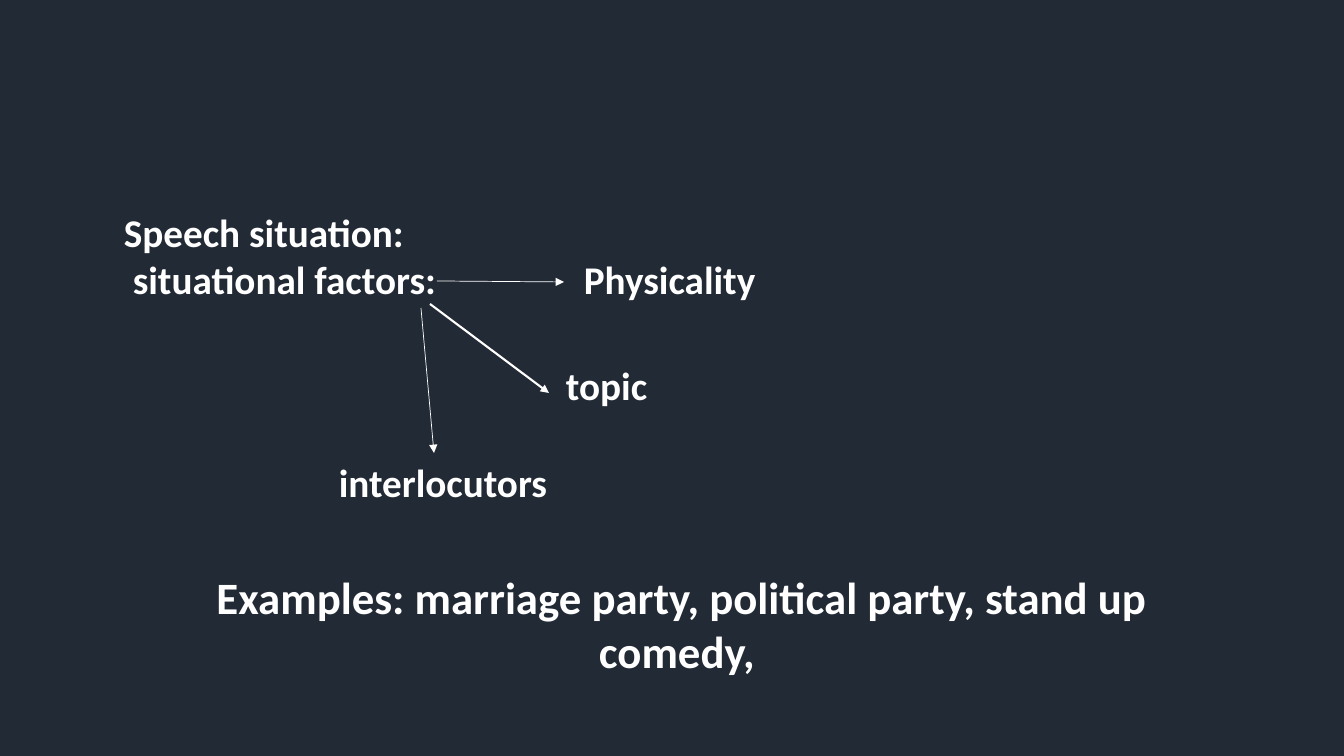
"""Build the speech situation slide with its three situational factors."""
import pptx
import pptx.util
import pptx.dml.color
import pptx.enum.shapes
import pptx.enum.text
import pptx.oxml.ns
import lxml.etree

WIDTH, HEIGHT = 1344, 756
PX = pptx.util.Inches(7.5) / HEIGHT
THEME = {"font": "Calibri", "bg": "222A35", "ink": "FFFFFF",
         "body": 28, "examples": 32, "thin": 0.5, "thick": 1.5}

HEADING = (["Speech situation:", " situational factors:"], (114, 203, 900, 105))
FACTORS = [
    ("Physicality", (574, 250, 371, 57), (437, 281, 564, 282), "thin"),
    ("topic", (556, 356, 191, 57), (430, 304, 549, 393), "thick"),
    ("interlocutors", (329, 453, 287, 57), (421, 308, 434, 453), "thin"),
]
EXAMPLES = ("Examples: marriage party, political party, stand up comedy, ",
            (128, 565, 1108, 65))


def emu(*lengths):
    return [round(n * PX) for n in lengths]


def color(name):
    return pptx.dml.color.RGBColor.from_string(THEME[name])


def add_text(s, lines, box, size="body", align="LEFT"):
    tf = s.shapes.add_textbox(*emu(*box)).text_frame
    tf.word_wrap = True
    tf.auto_size = pptx.enum.text.MSO_AUTO_SIZE.SHAPE_TO_FIT_TEXT
    for i, line in enumerate(lines):
        p = tf.add_paragraph() if i else tf.paragraphs[0]
        p.alignment = pptx.enum.text.PP_ALIGN[align]
        r = p.add_run()
        r.text = line
        r.font.name = THEME["font"]
        r.font.size = pptx.util.Pt(THEME[size])
        r.font.bold = True
        r.font.color.rgb = color("ink")


def add_arrow(s, ends, weight):
    sp = s.shapes.add_connector(pptx.enum.shapes.MSO_CONNECTOR.STRAIGHT, *emu(*ends))
    sp.line.color.rgb = color("ink")
    sp.line.width = pptx.util.Pt(THEME[weight])
    qn = pptx.oxml.ns.qn
    ln = sp._element.spPr.find(qn("a:ln"))
    lxml.etree.SubElement(ln, qn("a:tailEnd"), type="triangle")
    lxml.etree.SubElement(sp._element.spPr, qn("a:effectLst"))


def main():
    prs = pptx.Presentation()
    prs.slide_width, prs.slide_height = emu(WIDTH, HEIGHT)
    s = prs.slides.add_slide(prs.slide_layouts[6])
    s.background.fill.solid()
    s.background.fill.fore_color.rgb = color("bg")
    add_text(s, *HEADING)
    for label, box, ends, weight in FACTORS:
        add_arrow(s, ends, weight)
        add_text(s, [label], box)
    text, box = EXAMPLES
    add_text(s, [text], box, size="examples", align="CENTER")
    prs.save("out.pptx")


if __name__ == "__main__":
    main()
